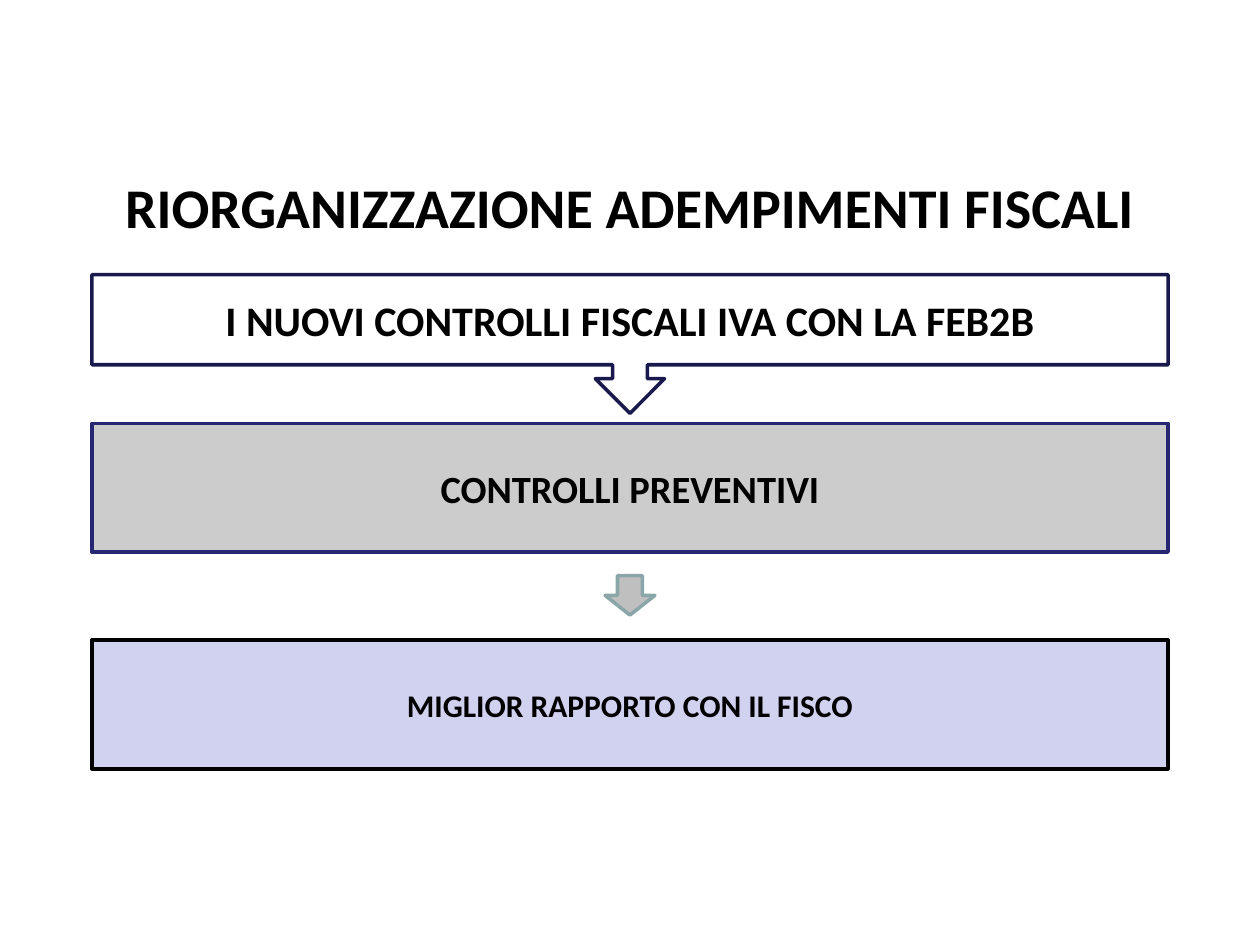
from dataclasses import dataclass

from pptx import Presentation
from pptx.dml.color import RGBColor
from pptx.enum.shapes import MSO_SHAPE
from pptx.enum.text import MSO_ANCHOR, PP_ALIGN
from pptx.util import Pt


@dataclass(frozen=True)
class Theme:
    font: str = "Calibri"
    ink: str = "000000"
    white: str = "FFFFFF"
    navy: str = "19194D"
    blue: str = "262673"
    lavender: str = "D1D1F0"
    grey: str = "CCCCCC"
    arrow_fill: str = "BFBFBF"
    arrow_line: str = "8AA6A8"
    title: int = 32
    heading: int = 24
    step: int = 22
    result: int = 18
    line_width: int = 2


class SlideBuilder:
    def __init__(self, page, theme):
        self.page = page
        self.theme = theme

    def add_text(self, box, text, size):
        frame = box.text_frame
        frame.word_wrap = True
        frame.vertical_anchor = MSO_ANCHOR.MIDDLE
        para = frame.paragraphs[0]
        para.alignment = PP_ALIGN.CENTER
        span = para.add_run()
        span.text = text
        span.font.name = self.theme.font
        span.font.size = Pt(size)
        span.font.bold = True
        span.font.color.rgb = RGBColor.from_string(self.theme.ink)

    def title(self, text, left, top, width, height):
        box = self.page.shapes.add_textbox(Pt(left), Pt(top), Pt(width), Pt(height))
        self.add_text(box, text, self.theme.title)

    def shape(self, kind, left, top, width, height, fill, line):
        shape = self.page.shapes.add_shape(kind, Pt(left), Pt(top), Pt(width), Pt(height))
        shape.shadow.inherit = False
        shape.fill.solid()
        shape.fill.fore_color.rgb = RGBColor.from_string(fill)
        shape.line.color.rgb = RGBColor.from_string(line)
        shape.line.width = Pt(self.theme.line_width)
        return shape

    def panel(self, kind, text, size, left, top, width, height, fill, line):
        box = self.shape(kind, left, top, width, height, fill, line)
        self.add_text(box, text, size)


def main():
    page_width, page_height = 720, 540
    panel_width = 615
    panel_left = (page_width - panel_width) / 2
    step_height = 73.5
    arrow_width = 28.5

    deck = Presentation()
    deck.slide_width = Pt(page_width)
    deck.slide_height = Pt(page_height)
    theme = Theme()
    builder = SlideBuilder(deck.slides.add_slide(deck.slide_layouts[6]), theme)

    builder.title("RIORGANIZZAZIONE ADEMPIMENTI FISCALI", 0, 96.5, page_width, 43)
    panels = [
        (MSO_SHAPE.DOWN_ARROW_CALLOUT, "I NUOVI CONTROLLI FISCALI IVA CON LA FEB2B",
         theme.heading, 157, 79.2, theme.white, theme.navy),
        (MSO_SHAPE.RECTANGLE, "CONTROLLI PREVENTIVI",
         theme.step, 242, step_height, theme.grey, theme.blue),
        (MSO_SHAPE.RECTANGLE, "MIGLIOR RAPPORTO CON IL FISCO",
         theme.result, 365.8, step_height, theme.lavender, theme.ink),
    ]
    for kind, text, size, top, height, fill, line in panels:
        builder.panel(kind, text, size, panel_left, top, panel_width, height, fill, line)
    builder.shape(MSO_SHAPE.DOWN_ARROW, (page_width - arrow_width) / 2, 329,
                  arrow_width, 22.5, theme.arrow_fill, theme.arrow_line)

    deck.save("out.pptx")


if __name__ == "__main__":
    main()
